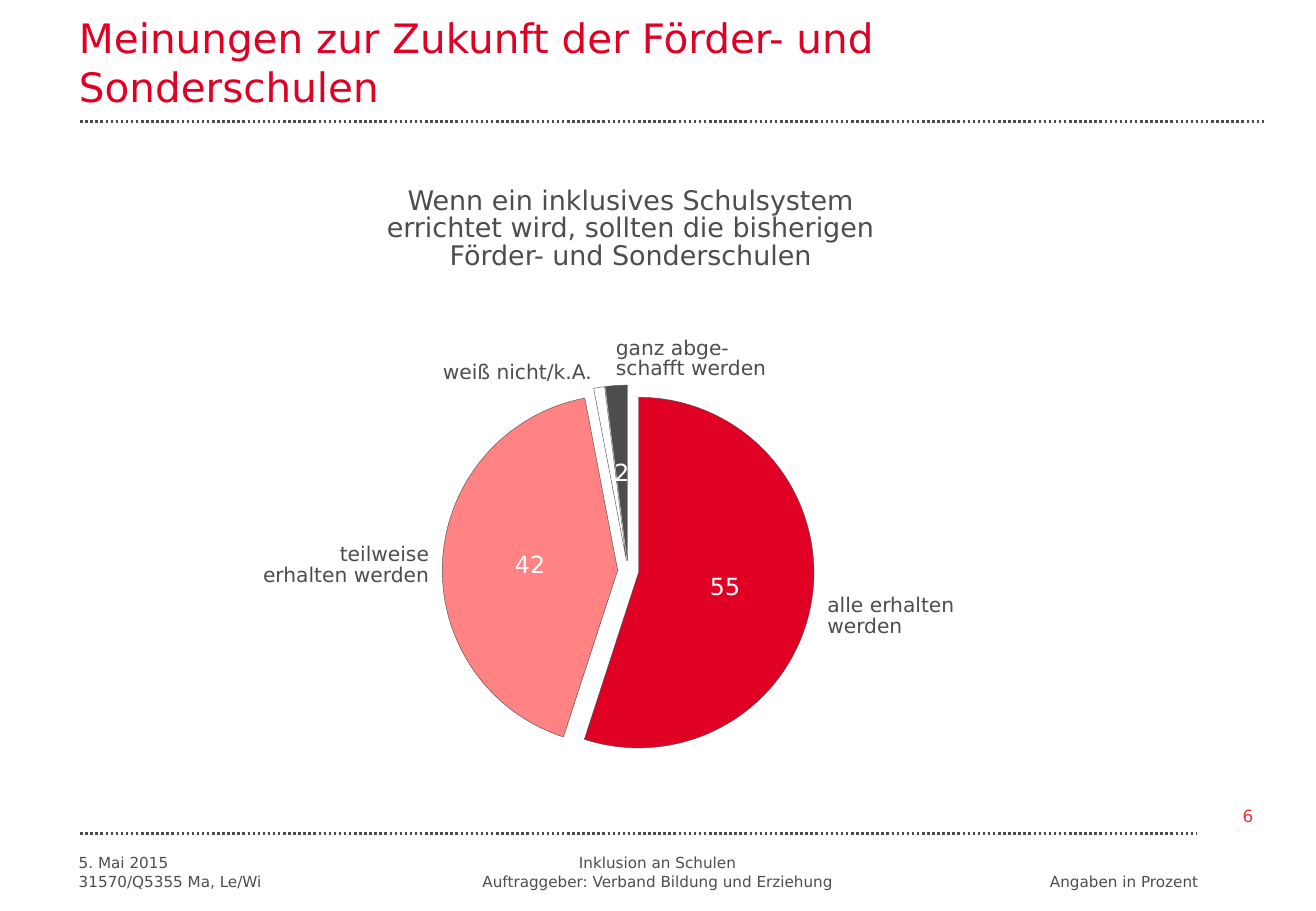
from lxml import etree
from pptx import Presentation
from pptx.chart.data import CategoryChartData
from pptx.dml.color import RGBColor
from pptx.enum.chart import XL_CHART_TYPE, XL_LABEL_POSITION
from pptx.enum.dml import MSO_LINE
from pptx.enum.shapes import MSO_CONNECTOR
from pptx.enum.text import MSO_ANCHOR, MSO_AUTO_SIZE, PP_ALIGN
from pptx.oxml.ns import qn
from pptx.util import Inches, Pt

LEFT, CENTER, RIGHT = PP_ALIGN.LEFT, PP_ALIGN.CENTER, PP_ALIGN.RIGHT
TOP, MIDDLE, BOTTOM = MSO_ANCHOR.TOP, MSO_ANCHOR.MIDDLE, MSO_ANCHOR.BOTTOM
PIE = XL_CHART_TYPE.PIE
LABEL_CENTER = XL_LABEL_POSITION.CENTER
DOTTED = MSO_LINE.ROUND_DOT
STRAIGHT = MSO_CONNECTOR.STRAIGHT
TITLE_ONLY = 5

FONT = "DejaVu Sans"
COLORS = {
    "red": "DF0024",
    "pink": "FF8383",
    "white": "FFFFFF",
    "gray": "4D4D4D",
    "page_red": "E73137",
}

# category, percent, fill, whether the value is printed on the slice
ANSWERS = [
    ("alle erhalten werden", 55, "red", True),
    ("teilweise erhalten werden", 42, "pink", True),
    ("weiß nicht/k.A.", 1, "white", False),
    ("ganz abgeschafft werden", 2, "gray", True),
]

# text, left, top, width, height, alignment, line spacing
SLICE_LABELS = [
    ("alle erhalten\nwerden", 6.71, 4.86, 1.25, 0.44, LEFT, 0.85),
    ("teilweise\nerhalten werden", 2.05, 4.44, 1.58, 0.44, RIGHT, 0.85),
    ("weiß nicht/k.A.", 3.49, 2.91, 1.48, 0.3, RIGHT, 1.0),
    ("ganz abge-\nschafft werden", 4.97, 2.74, 1.45, 0.44, LEFT, 0.85),
]


def rgb(name):
    return RGBColor.from_string(COLORS[name])


def format_font(font, size, color):
    font.name = FONT
    font.size = Pt(size)
    font.bold = False
    font.color.rgb = rgb(color)


def write_text(box, text, size, color="gray", align=LEFT, anchor=TOP, spacing=1.0):
    """Fill a shape with one unwrapped paragraph per line of text."""
    frame = box.text_frame
    frame.text = text
    frame.word_wrap = False
    frame.auto_size = MSO_AUTO_SIZE.NONE
    frame.vertical_anchor = anchor
    for para in frame.paragraphs:
        para.alignment = align
        para.line_spacing = spacing
        para.space_before = Pt(0)
        format_font(para.font, size, color)


def add_text(page, text, left, top, width, height, **text_format):
    box = page.shapes.add_textbox(Inches(left), Inches(top), Inches(width), Inches(height))
    write_text(box, text, **text_format)
    return box


def set_title(page, text):
    title = page.shapes.title
    title.left, title.top = Inches(0.55), Inches(0.05)
    title.width, title.height = Inches(6.94), Inches(0.91)
    write_text(title, text, size=24, color="red", anchor=BOTTOM)


def add_dotted_rule(page, left, right, y):
    rule = page.shapes.add_connector(
        STRAIGHT, Inches(left), Inches(y), Inches(right), Inches(y))
    rule.line.color.rgb = rgb("gray")
    rule.line.width = Pt(1.5)
    rule.line.dash_style = DOTTED
    etree.SubElement(rule._element.spPr, qn("a:effectLst"))


def add_value(parent, tag, value):
    return etree.SubElement(parent, qn(tag), val=str(value))


def place_plot(chart, x, y, width, height):
    """Fix the inner plot area as fractions of the chart."""
    plot_area = chart._chartSpace.find(".//" + qn("c:plotArea"))
    for old_layout in plot_area.findall(qn("c:layout")):
        plot_area.remove(old_layout)
    layout = etree.Element(qn("c:layout"))
    manual = etree.SubElement(layout, qn("c:manualLayout"))
    settings = [("layoutTarget", "inner"), ("xMode", "edge"), ("yMode", "edge"),
                ("x", x), ("y", y), ("w", width), ("h", height)]
    for tag, value in settings:
        add_value(manual, "c:" + tag, value)
    plot_area.insert(0, layout)


def explode_slices(series, percent):
    explosion = etree.Element(qn("c:explosion"), val=str(percent))
    series.format._element.find(qn("c:spPr")).addnext(explosion)


def hide_label(labels, index):
    label = etree.Element(qn("c:dLbl"))
    add_value(label, "c:idx", index)
    add_value(label, "c:delete", 1)
    labels._element.insert(0, label)


def add_pie(page):
    data = CategoryChartData()
    data.categories = [answer[0] for answer in ANSWERS]
    data.add_series("Series 1", [answer[1] for answer in ANSWERS])
    chart = page.shapes.add_chart(
        PIE, Inches(2.96), Inches(2.84), Inches(4.25), Inches(3.96), data).chart
    chart.has_legend = False
    chart.has_title = False
    format_font(chart.font, 18, "red")
    place_plot(chart, 0.16, 0.08, 0.72, 0.78)

    plot = chart.plots[0]
    plot.vary_by_categories = True
    series = plot.series[0]
    series.format.line.color.rgb = rgb("gray")
    explode_slices(series, 6)

    labels = series.data_labels
    labels.show_value = True
    labels.position = LABEL_CENTER
    format_font(labels.font, 14, "white")

    for index, (_, _, color, labelled) in enumerate(ANSWERS):
        slice_format = series.points[index].format
        slice_format.fill.solid()
        slice_format.fill.fore_color.rgb = rgb(color)
        slice_format.line.color.rgb = rgb("gray")
        slice_format.line.width = Pt(0.25)
        if not labelled:
            hide_label(labels, index)


def add_footer(page):
    add_dotted_rule(page, 0.66, 9.85, 6.86)
    add_text(page, "5. Mai 2015\n31570/Q5355 Ma, Le/Wi", 0.55, 6.98, 1.76, 0.4, size=9)
    add_text(page, "Inklusion an Schulen\nAuftraggeber: Verband Bildung und Erziehung",
             3.84, 6.98, 3.14, 0.4, size=9, align=CENTER)
    add_text(page, "Angaben in Prozent", 8.53, 7.13, 1.44, 0.25, size=9, align=CENTER)
    number = add_text(page, "6", 10.05, 6.52, 0.44, 0.39, size=10, color="page_red",
                      align=CENTER, anchor=MIDDLE)
    frame = number.text_frame
    frame.margin_left = frame.margin_right = frame.margin_top = frame.margin_bottom = 0


def main():
    deck = Presentation()
    deck.slide_width, deck.slide_height = Inches(10.83), Inches(7.5)
    page = deck.slides.add_slide(deck.slide_layouts[TITLE_ONLY])

    set_title(page, "Meinungen zur Zukunft der Förder- und\nSonderschulen")
    add_dotted_rule(page, 0.66, 10.41, 1)
    add_text(page,
             "Wenn ein inklusives Schulsystem\n"
             "errichtet wird, sollten die bisherigen\n"
             "Förder- und Sonderschulen",
             3.05, 1.5, 4.28, 0.79, size=16, align=CENTER, spacing=0.85)
    add_pie(page)
    for text, left, top, width, height, align, spacing in SLICE_LABELS:
        add_text(page, text, left, top, width, height, size=12, align=align, spacing=spacing)
    add_footer(page)

    deck.save("out.pptx")


if __name__ == "__main__":
    main()
